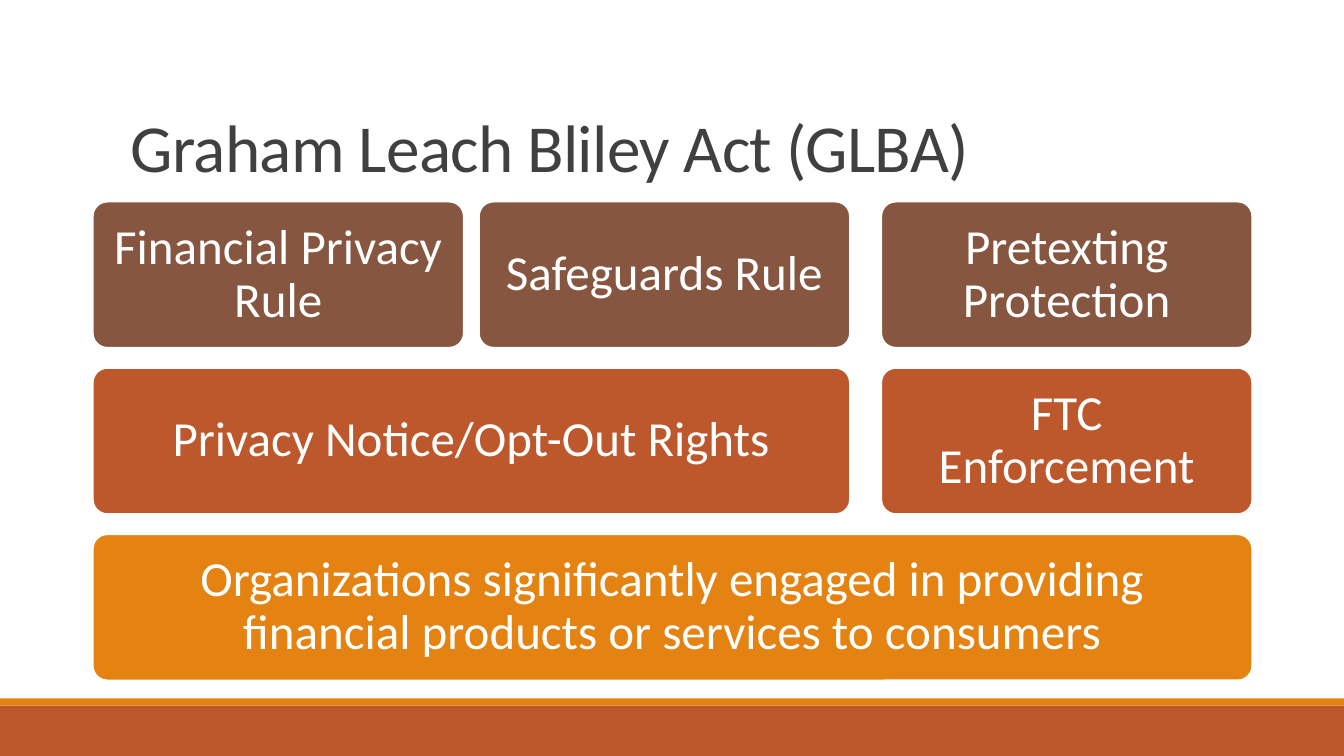
from pptx import Presentation
from pptx.dml.color import RGBColor
from pptx.enum.shapes import MSO_SHAPE
from pptx.enum.text import MSO_ANCHOR, PP_ALIGN
from pptx.util import Inches, Pt

RECT, ROUNDED = MSO_SHAPE.RECTANGLE, MSO_SHAPE.ROUNDED_RECTANGLE
MIDDLE, BOTTOM = MSO_ANCHOR.MIDDLE, MSO_ANCHOR.BOTTOM
LEFT, CENTER = PP_ALIGN.LEFT, PP_ALIGN.CENTER

WIDTH, HEIGHT = 13.33, 7.5
BROWN, RUST, ORANGE = "865640", "BD582C", "E48312"
WHITE, GRAY = "FFFFFF", "404040"

COLUMNS = [0.92, 4.75, 8.74]
BOX_W, BOX_H = 3.68, 1.45
TOP, ROW_STEP = 2, 1.65


def add_block(kind, left, top, width, height, color):
    s = slide.shapes.add_shape(kind, Inches(left), Inches(top), Inches(width), Inches(height))
    s.shadow.inherit = False
    s.fill.solid()
    s.fill.fore_color.rgb = RGBColor.from_string(color)
    s.line.fill.background()
    return s


def write(s, text, size, color, align, spacing, frame):
    """Fill a shape with one paragraph; frame holds text frame attributes."""
    tf = s.text_frame
    for name, value in frame.items():
        setattr(tf, name, value)
    p = tf.paragraphs[0]
    p.alignment, p.line_spacing = align, spacing
    r = p.add_run()
    r.text = text
    for name, value in {"name": "Calibri", "size": Pt(size)}.items():
        setattr(r.font, name, value)
    r.font.color.rgb = RGBColor.from_string(color)
    return r


prs = Presentation()
prs.slide_width, prs.slide_height = Inches(WIDTH), Inches(HEIGHT)
slide = prs.slides.add_slide(prs.slide_layouts[6])

# Footer bands
add_block(RECT, 0, 7, WIDTH, 0.5, RUST)
add_block(RECT, 0, 6.93, WIDTH, 0.07, ORANGE)

# Title
title = slide.shapes.add_textbox(Inches(1.2), Inches(0.31), Inches(11), Inches(1.59))
r = write(title, "Graham Leach Bliley Act (GLBA)", 48, GRAY, LEFT, 0.85,
          {"word_wrap": True, "vertical_anchor": BOTTOM})
r.font._element.set("spc", "-50")

# Boxes: row, first column, last column, text
ROW_COLORS = [BROWN, RUST, ORANGE]
BOXES = [
    (2, 0, 2, "Organizations significantly engaged in providing financial products or services to consumers"),
    (1, 0, 1, "Privacy Notice/Opt-Out Rights"),
    (0, 0, 0, "Financial Privacy Rule"),
    (0, 1, 1, "Safeguards Rule"),
    (1, 2, 2, "FTC Enforcement"),
    (0, 2, 2, "Pretexting Protection"),
]
BOX_FRAME = {"word_wrap": True, "vertical_anchor": MIDDLE}
BOX_FRAME.update({f"margin_{side}": Inches(0.15) for side in ("left", "top", "right", "bottom")})

for row, first, last, text in BOXES:
    width = COLUMNS[last] + BOX_W - COLUMNS[first]
    box = add_block(ROUNDED, COLUMNS[first], TOP + row * ROW_STEP, width, BOX_H, ROW_COLORS[row])
    box.adjustments[0] = 0.1
    box.line.color.rgb = RGBColor.from_string(WHITE)
    box.line.width = Pt(1.25)
    write(box, text, 35, WHITE, CENTER, 0.9, BOX_FRAME)

prs.save("out.pptx")
